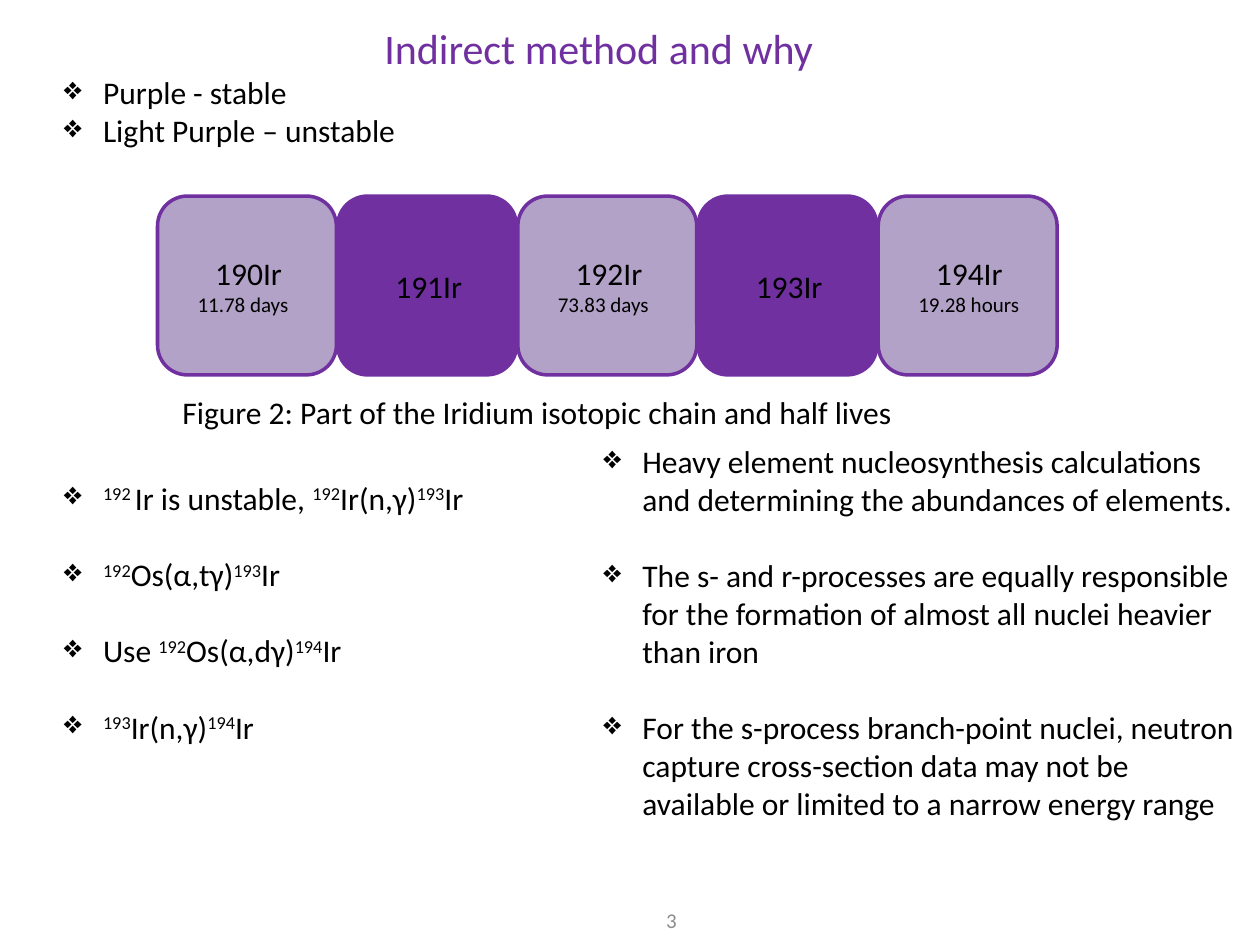
from typing import NamedTuple

from lxml.etree import SubElement
from pptx import Presentation
from pptx.dml.color import RGBColor
from pptx.enum.shapes import MSO_SHAPE
from pptx.enum.text import MSO_ANCHOR, MSO_AUTO_SIZE, PP_ALIGN
from pptx.oxml.ns import qn
from pptx.util import Inches, Pt

SLIDE_WIDTH, SLIDE_HEIGHT = Inches(10), Inches(7.5)
FONT = "Calibri"
COLORS = {"stable": "7030A0", "unstable": "B3A2C7", "text": "000000", "number": "8C8C8C"}
BULLET_INDENT = Inches(0.31)
BLANK_LINE = 22


class Place(NamedTuple):
    """Left, top, width and height in percent of the slide's size."""
    left: float
    top: float
    width: float
    height: float

    def lengths(self) -> tuple[int, int, int, int]:
        return (int(SLIDE_WIDTH * self.left / 100), int(SLIDE_HEIGHT * self.top / 100),
                int(SLIDE_WIDTH * self.width / 100), int(SLIDE_HEIGHT * self.height / 100))


class Isotope(NamedTuple):
    name: str
    half_life: str = ""


class BulletList(NamedTuple):
    place: Place
    items: list[str]
    gap: float = 0
    wrap: bool = True


ISOTOPES = [
    Isotope("190Ir", "11.78 days"),
    Isotope("191Ir"),
    Isotope("192Ir", "73.83 days"),
    Isotope("193Ir"),
    Isotope("194Ir", "19.28 hours"),
]
FIRST_TILE = Place(12.5, 20.75, 14.2, 18.93)
TILE_PITCH = 14.3

# Text between carets is superscript.
BULLET_LISTS = [
    BulletList(Place(4.1, 7.07, 28.7, 9.47),
               ["Purple - stable", "Light Purple – unstable"], wrap=False),
    BulletList(Place(4.1, 50, 37.7, 37.73), [
        "^192 ^Ir is unstable, ^192^Ir(n,γ)^193^Ir",
        "^192^Os(α,tγ)^193^Ir",
        "Use ^192^Os(α,dγ)^194^Ir",
        "^193^Ir(n,γ)^194^Ir",
    ], BLANK_LINE),
    BulletList(Place(46.9, 46.13, 53.1, 53.87), [
        "Heavy element nucleosynthesis calculations and determining the abundances of elements.",
        "The s- and r-processes are equally responsible for the formation of almost all nuclei "
        "heavier than iron",
        "For the s-process branch-point nuclei, neutron capture cross-section data may not be "
        "available or limited to a narrow energy range",
    ], BLANK_LINE),
]


def rgb(name: str) -> RGBColor:
    return RGBColor.from_string(COLORS[name])


def add_run(paragraph, text: str, size: float = 18, color: str = "text",
            superscript: bool = False) -> None:
    run = paragraph.add_run()
    run.text = text
    run.font.name = FONT
    run.font.size = Pt(size)
    run.font.color.rgb = rgb(color)
    if superscript:
        run.font._element.set("baseline", "30000")


def add_text_box(slide, place: Place, wrap: bool = True):
    text_frame = slide.shapes.add_textbox(*place.lengths()).text_frame
    text_frame.word_wrap = wrap
    return text_frame


def indent(paragraph, left: int, first_line: int = 0) -> None:
    properties = paragraph._p.get_or_add_pPr()
    properties.set("marL", str(left))
    properties.set("indent", str(first_line))


def add_bullet_list(slide, bullets: BulletList) -> None:
    text_frame = add_text_box(slide, bullets.place, bullets.wrap)
    for index, item in enumerate(bullets.items):
        paragraph = text_frame.add_paragraph() if index else text_frame.paragraphs[0]
        indent(paragraph, BULLET_INDENT, -BULLET_INDENT)
        SubElement(paragraph._p.get_or_add_pPr(), qn("a:buChar")).set("char", "❖")
        if index and bullets.gap:
            paragraph.space_before = Pt(bullets.gap)
        for part, text in enumerate(item.split("^")):
            if text:
                add_run(paragraph, text, superscript=part % 2 == 1)


def add_isotope(slide, isotope: Isotope, column: int) -> None:
    place = FIRST_TILE._replace(left=FIRST_TILE.left + column * TILE_PITCH)
    tile = slide.shapes.add_shape(MSO_SHAPE.ROUNDED_RECTANGLE, *place.lengths())
    tile.shadow.inherit = False
    tile.fill.solid()
    tile.fill.fore_color.rgb = rgb("unstable" if isotope.half_life else "stable")
    tile.line.color.rgb = rgb("stable")
    tile.line.width = Pt(2)
    text_frame = tile.text_frame
    text_frame.vertical_anchor = MSO_ANCHOR.MIDDLE
    name = text_frame.paragraphs[0]
    name.alignment = PP_ALIGN.LEFT
    indent(name, Inches(0.29))
    add_run(name, isotope.name)
    if isotope.half_life:
        half_life = text_frame.add_paragraph()
        half_life.alignment = PP_ALIGN.LEFT
        indent(half_life, Inches(0.15))
        add_run(half_life, isotope.half_life, 12)


def add_title(slide, text: str, place: Place) -> None:
    title = slide.shapes.title
    title.left, title.top, title.width, title.height = place.lengths()
    text_frame = title.text_frame
    text_frame.word_wrap = False
    text_frame.auto_size = MSO_AUTO_SIZE.NONE
    text_frame.vertical_anchor = MSO_ANCHOR.TOP
    paragraph = text_frame.paragraphs[0]
    paragraph.alignment = PP_ALIGN.LEFT
    add_run(paragraph, text, 24, "stable")


def main() -> None:
    presentation = Presentation()
    presentation.slide_width, presentation.slide_height = SLIDE_WIDTH, SLIDE_HEIGHT
    slide = presentation.slides.add_slide(presentation.slide_layouts.get_by_name("Title Only"))

    add_title(slide, "Indirect method and why", Place(29.5, 1.73, 36.4, 6.67))
    for column, isotope in enumerate(ISOTOPES):
        add_isotope(slide, isotope, column)
    caption = add_text_box(slide, Place(13.5, 40.93, 59, 5.33), wrap=False)
    add_run(caption.paragraphs[0], "Figure 2: Part of the Iridium isotopic chain and half lives")
    for bullets in BULLET_LISTS:
        add_bullet_list(slide, bullets)

    page_number = add_text_box(slide, Place(47.6, 94.67, 7.1, 5.33))
    page_number.vertical_anchor = MSO_ANCHOR.MIDDLE
    page_number.paragraphs[0].alignment = PP_ALIGN.RIGHT
    add_run(page_number.paragraphs[0], "3", 12, "number")

    presentation.save("out.pptx")


if __name__ == "__main__":
    main()
